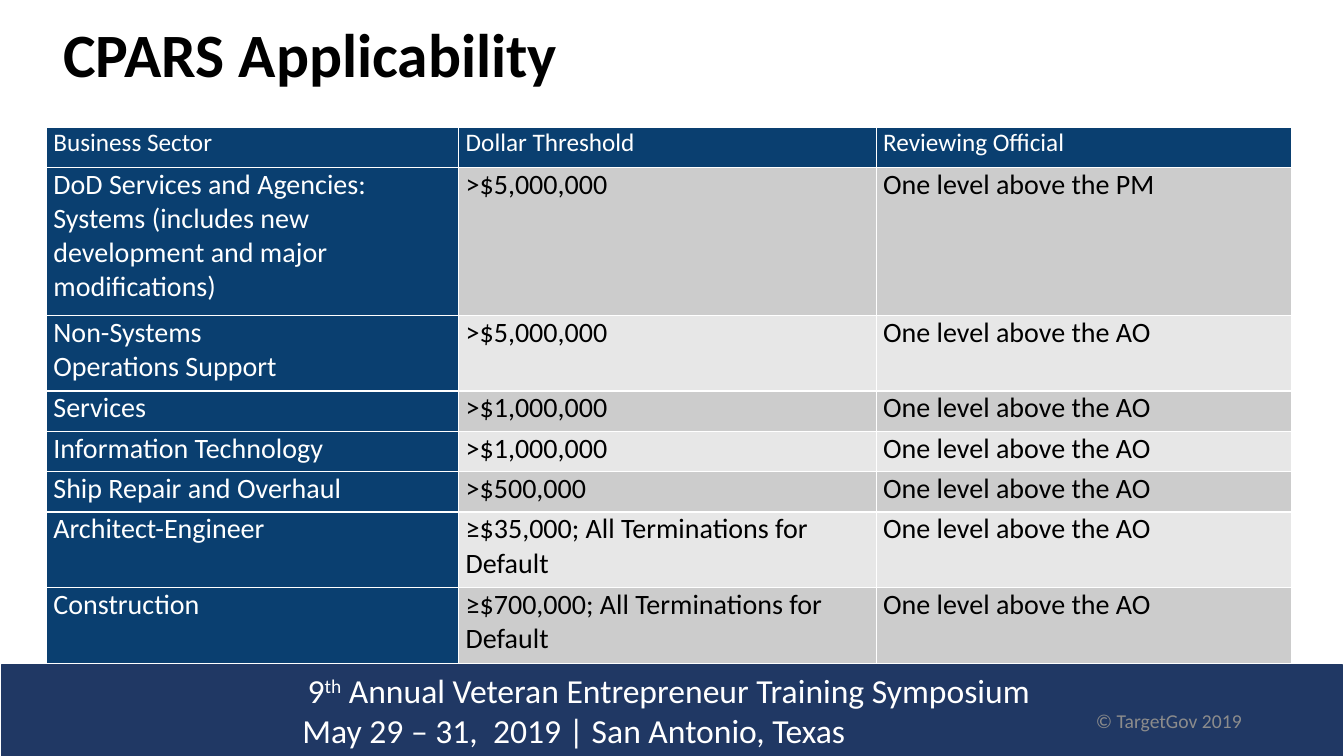
from dataclasses import dataclass

from lxml import etree
from pptx import Presentation
from pptx.dml.color import RGBColor
from pptx.enum.shapes import MSO_SHAPE
from pptx.enum.text import MSO_ANCHOR, PP_ALIGN
from pptx.oxml.ns import qn
from pptx.util import Inches, Pt

RECT = MSO_SHAPE.RECTANGLE
TOP, MIDDLE = MSO_ANCHOR.TOP, MSO_ANCHOR.MIDDLE
LEFT = PP_ALIGN.LEFT


@dataclass(frozen=True)
class Theme:
    font: str = "Calibri"
    white: str = "FFFFFF"
    black: str = "000000"
    grey: str = "8C8C8C"
    footer: str = "203864"
    header: str = "0A3F70"
    bands: tuple = ("CCCCCC", "E7E7E7")
    title_size: int = 44
    footer_size: int = 24
    body_size: int = 20
    header_size: int = 18
    credit_size: int = 14


THEME = Theme()

COLUMNS = [4.09, 4.14, 4.12]
ROW_HEIGHTS = [0.4, 1.47, 0.75, 0.4, 0.4, 0.4, 0.75, 0.75]
AO = "One level above the AO"
ROWS = [
    ("Business Sector", "Dollar Threshold", "Reviewing Official"),
    ("DoD Services and Agencies:\nSystems (includes new development and major modifications)",
     ">$5,000,000", "One level above the PM"),
    ("Non-Systems\nOperations Support", ">$5,000,000", AO),
    ("Services", ">$1,000,000", AO),
    ("Information Technology", ">$1,000,000", AO),
    ("Ship Repair and Overhaul", ">$500,000", AO),
    ("Architect-Engineer", "≥$35,000; All Terminations for Default", AO),
    ("Construction", "≥$700,000; All Terminations for Default", AO),
]


def set_attrs(obj, values):
    for name, value in values.items():
        setattr(obj, name, value)


def add_run(p, text, size, color, bold=False):
    r = p.add_run()
    r.text = text
    set_attrs(r.font, {"name": THEME.font, "size": Pt(size), "bold": bold})
    r.font.color.rgb = RGBColor.from_string(color)
    return r


def add_text(slide, box, text, size, color, anchor=TOP, bold=False, spacing=1.0):
    tf = slide.shapes.add_textbox(*map(Inches, box)).text_frame
    set_attrs(tf, {"word_wrap": True, "vertical_anchor": anchor})
    p = tf.paragraphs[0]
    p.line_spacing = spacing
    add_run(p, text, size, color, bold)


def add_borders(cell):
    tc_pr = cell._tc.get_or_add_tcPr()
    for side in ("a:lnL", "a:lnR", "a:lnT", "a:lnB"):
        ln = etree.SubElement(tc_pr, qn(side), w=str(Pt(1)))
        fill = etree.SubElement(ln, qn("a:solidFill"))
        etree.SubElement(fill, qn("a:srgbClr"), val=THEME.white)


def fill_cell(cell, text, size, color, fill):
    add_borders(cell)
    cell.fill.solid()
    cell.fill.fore_color.rgb = RGBColor.from_string(fill)
    set_attrs(cell, {"margin_left": Inches(0.07), "margin_right": Inches(0.07),
                     "margin_top": 0, "margin_bottom": 0, "vertical_anchor": TOP})
    tf = cell.text_frame
    for i, line in enumerate(text.split("\n")):
        p = tf.add_paragraph() if i else tf.paragraphs[0]
        add_run(p, line, size, color)


def add_thresholds(slide, box):
    table = slide.shapes.add_table(len(ROWS), len(COLUMNS), *map(Inches, box)).table
    set_attrs(table, {"first_row": False, "horz_banding": False})
    for column, width in zip(table.columns, COLUMNS):
        column.width = Inches(width)
    for i, (row, height, texts) in enumerate(zip(table.rows, ROW_HEIGHTS, ROWS)):
        row.height = Inches(height)
        size = THEME.body_size if i else THEME.header_size
        for j, text in enumerate(texts):
            heading = i == 0 or j == 0
            color = THEME.white if heading else THEME.black
            fill = THEME.header if heading else THEME.bands[(i - 1) % 2]
            fill_cell(table.cell(i, j), text, size, color, fill)


def add_footer(slide, box):
    left, top, width, height = box
    s = slide.shapes.add_shape(RECT, *map(Inches, box))
    s.shadow.inherit = False
    s.fill.solid()
    s.fill.fore_color.rgb = RGBColor.from_string(THEME.footer)
    s.line.color.rgb = RGBColor.from_string(THEME.footer)
    s.line.width = Pt(1)
    tf = s.text_frame
    set_attrs(tf, {"word_wrap": True, "vertical_anchor": MIDDLE, "margin_left": Inches(2.98)})
    event, place = tf.paragraphs[0], tf.add_paragraph()
    event.alignment = place.alignment = LEFT
    event._p.get_or_add_pPr().set("marL", str(Inches(0.05)))
    style = (THEME.footer_size, THEME.white)
    add_run(event, "9", *style)
    add_run(event, "th", *style).font._element.set("baseline", "30000")
    add_run(event, " Annual Veteran Entrepreneur Training Symposium", *style)
    add_run(place, "May 29 – 31,  2019 | San Antonio, Texas", *style)
    add_text(slide, (left + 10.75, top + 0.4, 2.22, 0.32), "© TargetGov 2019",
             THEME.credit_size, THEME.grey, MIDDLE)


def main():
    prs = Presentation()
    set_attrs(prs, {"slide_width": Inches(13.33), "slide_height": Inches(7.5)})
    slide = prs.slides.add_slide(prs.slide_layouts[6])
    add_footer(slide, (0.02, 6.59, 13.29, 0.91))
    add_text(slide, (0.53, 0.19, 11.5, 1.45), "CPARS Applicability",
             THEME.title_size, THEME.black, bold=True, spacing=0.9)
    add_thresholds(slide, (0.46, 1.26, sum(COLUMNS), sum(ROW_HEIGHTS)))
    prs.save("out.pptx")


if __name__ == "__main__":
    main()
